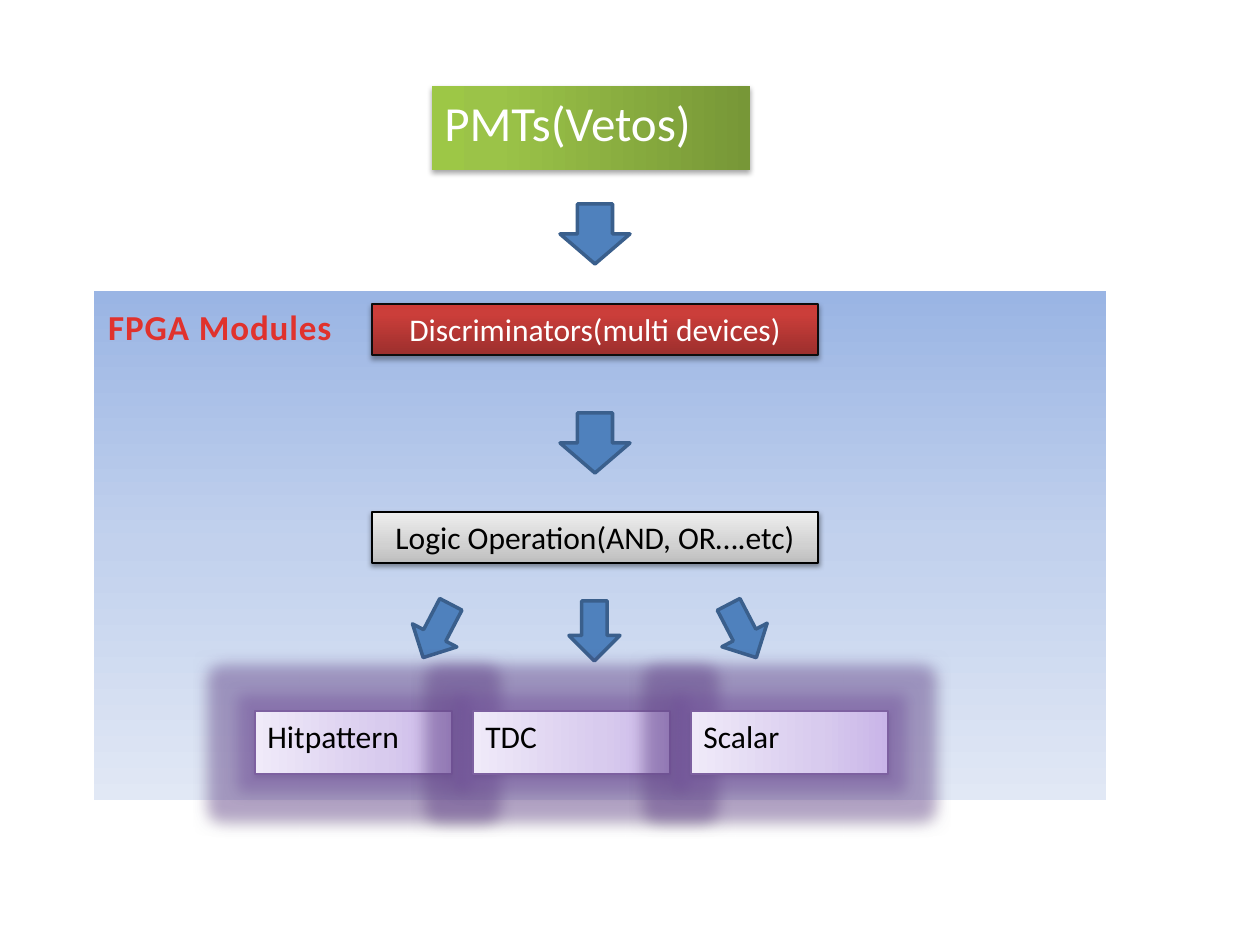
"""Build a slide showing the veto signal flow through the FPGA modules."""
from lxml.etree import SubElement
from pptx import Presentation
from pptx.dml.color import RGBColor
from pptx.enum.shapes import MSO_SHAPE
from pptx.enum.text import MSO_AUTO_SIZE, PP_ALIGN
from pptx.oxml import parse_xml
from pptx.oxml.ns import nsdecls, qn
from pptx.util import Pt

PX = 914400 / 126
COLORS = {
    "white": "FFFFFF", "black": "000000", "outline": "0D0D0D",
    "arrow": "4F81BD", "arrow_edge": "3A5F8C",
    "output_edge": "7D60A0", "glow": "7B57A8",
}
GRADIENTS = {
    "panel": [(0, "9AB5E4"), (50, "C2D1ED"), (100, "E1E8F5")],
    "green": [(0, "779737"), (80, "9BC348"), (100, "9DC746")],
    "red": [(0, "9C2F2D"), (80, "CB3E3A"), (100, "CE3B37")],
    "gray": [(0, "BDBDBD"), (35, "D1D1D1"), (100, "EEEEEE")],
    "purple": [(0, "C9B5E8"), (35, "D8CBEE"), (100, "F0EAF9")],
    "title": [(25, "E0322D"), (100, "A2201C")],
}


def gradient_fill(name, angle):
    stops = "".join(
        f'<a:gs pos="{position * 1000}"><a:srgbClr val="{color}"/></a:gs>'
        for position, color in GRADIENTS[name]
    )
    return parse_xml(
        f'<a:gradFill {nsdecls("a")} rotWithShape="1"><a:gsLst>{stops}</a:gsLst>'
        f'<a:lin ang="{angle * 60000}" scaled="0"/></a:gradFill>'
    )


def add_box(text, left, top, width, height, *, gradient, angle=270, size=18, color="white",
            line=None, line_width=0.75, turned=False, shadow=None, glow=False):
    if turned:
        left, top = left + (width - height) / 2, top + (height - width) / 2
        width, height = height, width
    box = [round(value * PX) for value in (left, top, width, height)]
    shape = slide.shapes.add_shape(MSO_SHAPE.RECTANGLE, *box)
    shape.shadow.inherit = False
    properties = shape._element.spPr
    properties.find(qn("a:prstGeom")).addnext(gradient_fill(gradient, angle))
    if line:
        shape.line.color.rgb = RGBColor.from_string(COLORS[line])
        shape.line.width = Pt(line_width)
    else:
        shape.line.fill.background()
    effects = properties.find(qn("a:effectLst"))
    if glow:
        halo = SubElement(effects, qn("a:glow"), rad=str(Pt(18)))
        halo_color = SubElement(halo, qn("a:srgbClr"), val=COLORS["glow"])
        SubElement(halo_color, qn("a:alpha"), val="40000")
    if shadow:
        alpha, distance = shadow
        outer = SubElement(effects, qn("a:outerShdw"), blurRad=str(Pt(3.1)),
                           dist=str(Pt(distance)), dir="5400000", rotWithShape="0")
        outer_color = SubElement(outer, qn("a:srgbClr"), val=COLORS["black"])
        SubElement(outer_color, qn("a:alpha"), val=str(alpha * 1000))
    if text:
        frame = shape.text_frame
        frame.word_wrap = True
        frame.auto_size = MSO_AUTO_SIZE.SHAPE_TO_FIT_TEXT
        body = frame._txBody.bodyPr
        body.set("anchor", "t")
        if turned:
            shape.rotation = 270
            body.set("vert", "eaVert")
        paragraph = frame.paragraphs[0]
        paragraph.alignment = PP_ALIGN.CENTER
        run = paragraph.add_run()
        run.text = text
        run.font.name = "Calibri"
        run.font.size = Pt(size)
        run.font.color.rgb = RGBColor.from_string(COLORS[color])


presentation = Presentation()
presentation.slide_width = round(1260 * PX)
presentation.slide_height = round(945 * PX)
slide = presentation.slides.add_slide(presentation.slide_layouts[6])

add_box("", 94, 291, 1012, 509, gradient="panel", angle=90)
add_box("PMTs(Vetos)", 432, 86, 318, 84, gradient="green", size=28, turned=True,
        shadow=(35, 1.8))
add_box("Discriminators(multi devices)", 372, 304, 446, 51, gradient="red",
        line="outline", line_width=1, shadow=(35, 1.8))
add_box("Logic Operation(AND, OR….etc)", 372, 512, 446, 51, gradient="gray",
        color="black", line="black", shadow=(38, 1.6))

for left, top, width, rotation in [
    (560, 204, 70, 0), (560, 413, 70, 0),
    (717, 601, 51, 332.5), (569, 601, 51, 0), (412, 601, 50, 27.5),
]:
    arrow = slide.shapes.add_shape(
        MSO_SHAPE.DOWN_ARROW, *[round(value * PX) for value in (left, top, width, 60)])
    arrow.rotation = rotation
    arrow.shadow.inherit = False
    arrow.fill.solid()
    arrow.fill.fore_color.rgb = RGBColor.from_string(COLORS["arrow"])
    arrow.line.color.rgb = RGBColor.from_string(COLORS["arrow_edge"])
    arrow.line.width = Pt(2)

for index, output in enumerate(["Hitpattern", "TDC", "Scalar"]):
    add_box(output, 255 + 218 * index, 711, 197, 63, gradient="purple", color="black",
            line="output_edge", turned=True, shadow=(38, 1.6), glow=True)

title = slide.shapes.add_textbox(*[round(value * PX) for value in (94, 299, 252, 55)])
title.text_frame.word_wrap = False
title.text_frame.auto_size = MSO_AUTO_SIZE.SHAPE_TO_FIT_TEXT
title_paragraph = title.text_frame.paragraphs[0]
title_paragraph.alignment = PP_ALIGN.CENTER
title_run = title_paragraph.add_run()
title_run.text = "FPGA Modules"
title_run.font.name = "Calibri"
title_run.font.size = Pt(20)
title_run.font.bold = True
title_properties = title_run.font._element
title_properties.set("spc", "50")
title_properties.insert(0, gradient_fill("title", 90))

presentation.save("out.pptx")
